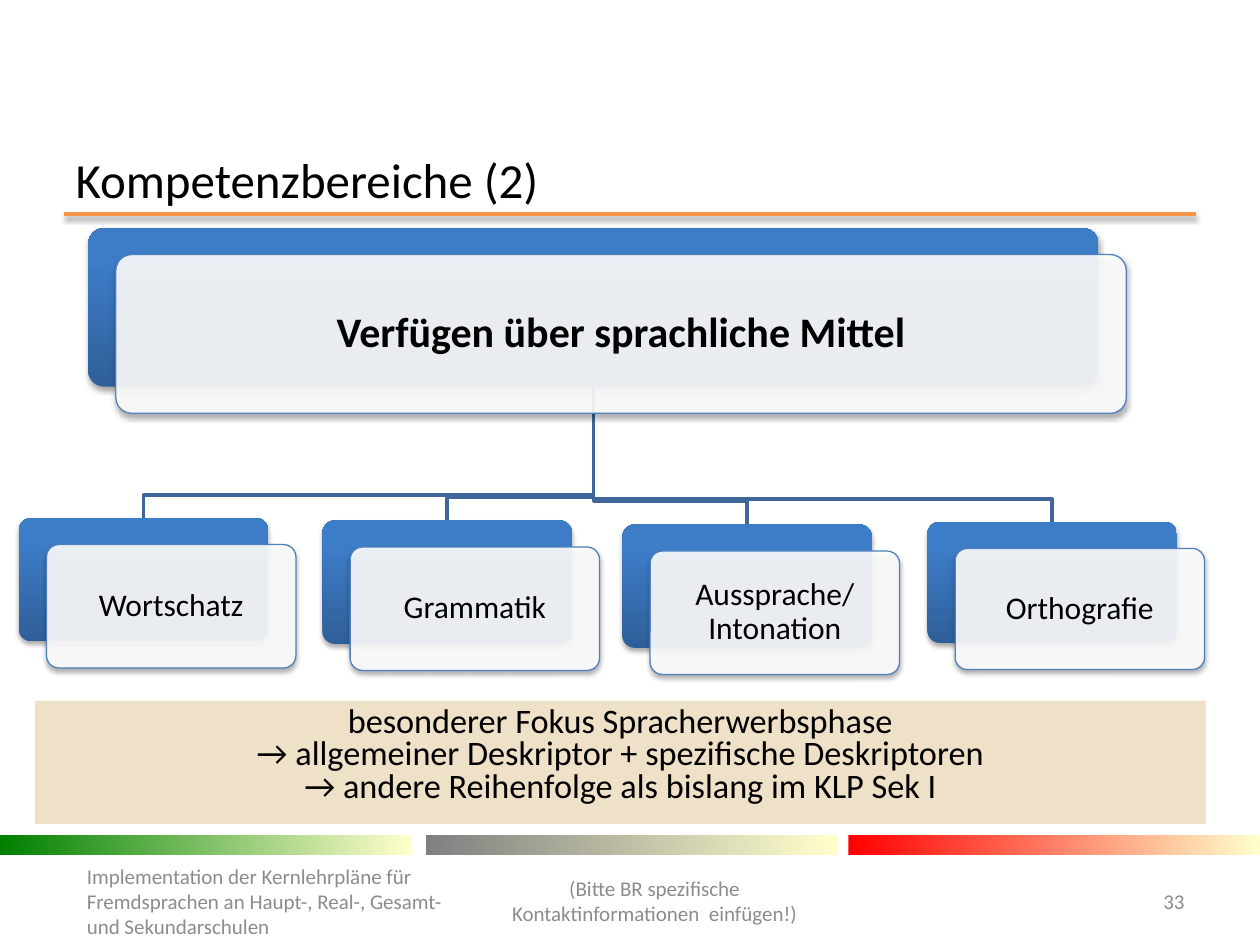
from lxml.etree import SubElement
from pptx import Presentation
from pptx.dml.color import RGBColor
from pptx.enum.shapes import MSO_CONNECTOR, MSO_SHAPE
from pptx.enum.text import MSO_ANCHOR, MSO_AUTO_SIZE, PP_ALIGN
from pptx.oxml.ns import qn
from pptx.util import Pt

FONT = "Calibri"
COLORS = {
    "text": "000000", "footer": "8C8C8C", "rule": "F79646",
    "link": "3F6797", "card_dark": "2F5F99", "card_light": "3D7CC7",
    "front": "FFFFFF", "front_line": "4F81BD", "band": "EFE0C8",
    "green": "008000", "grey": "808080", "red": "FF0000", "cream": "FFFFCC",
}
ROOT = (50.4, 130.3, 577.4, 90.7)
CARD_WIDTH = 142.5
CHILDREN = [  # label, left, top, height
    ("Wortschatz", 10.8, 296, 70.5),
    ("Grammatik", 184.3, 297.4, 70.5),
    ("Aussprache/ Intonation", 355.7, 299.7, 70.5),
    ("Orthografie", 530, 298.2, 69.2),
]
FRONT_OFFSET = (15.8, 15.2)
BEND_HEIGHT = 13


def color(name):
    return RGBColor.from_string(COLORS[name])


def set_shadow(shape, opacity=0):
    """Replace the theme shadow by a soft one below, or by none."""
    effects = SubElement(shape.element.spPr, qn("a:effectLst"))
    if opacity:
        shadow = SubElement(effects, qn("a:outerShdw"), blurRad=str(Pt(3.1)),
                            dist=str(Pt(1.8)), dir="5400000", rotWithShape="0")
        shade = SubElement(shadow, qn("a:srgbClr"), val="000000")
        SubElement(shade, qn("a:alpha"), val=str(opacity * 1000))


def set_gradient(shape, start, end, angle=0, end_position=1):
    shape.fill.gradient()
    shape.fill.gradient_angle = angle
    first, last = shape.fill.gradient_stops
    first.color.rgb, first.position = color(start), 0
    last.color.rgb, last.position = color(end), end_position


def add_box(slide, kind, left, top, width, height):
    shape = slide.shapes.add_shape(kind, Pt(left), Pt(top), Pt(width), Pt(height))
    shape.line.fill.background()
    return shape


def write(shape, lines, size, color_name="text", align=PP_ALIGN.LEFT,
          anchor=MSO_ANCHOR.MIDDLE, spacing=1, bold=False):
    frame = shape.text_frame
    frame.word_wrap = True
    frame.auto_size = MSO_AUTO_SIZE.NONE
    frame.vertical_anchor = anchor
    frame.text = "\n".join(lines)
    for paragraph in frame.paragraphs:
        paragraph.alignment = align
        paragraph.line_spacing = spacing
        paragraph.font.name = FONT
        paragraph.font.size = Pt(size)
        paragraph.font.bold = bold
        paragraph.font.color.rgb = color(color_name)


def add_title(slide, text):
    title = slide.shapes.title
    title.left, title.top, title.width, title.height = Pt(36), Pt(88.5), Pt(648), Pt(28)
    write(title, [text], 28)


def add_rule(slide):
    rule = slide.shapes.add_connector(
        MSO_CONNECTOR.STRAIGHT, Pt(36.7), Pt(122.4), Pt(683.3), Pt(122.4))
    rule.line.color.rgb = color("rule")
    rule.line.width = Pt(2)
    set_shadow(rule, 38)


def add_footer_bars(slide):
    for left, start in ((0, "green"), (243.4, "grey"), (484.8, "red")):
        bar = add_box(slide, MSO_SHAPE.RECTANGLE, left, 477.2, 235.2, 11.4)
        set_gradient(bar, start, "cream")
        set_shadow(bar)


def add_link(slide, left, top):
    """Draw the elbow line from the root card to the card at left, top."""
    root_x, root_y = ROOT[0] + ROOT[2] / 2, ROOT[1] + ROOT[3]
    child_x, bend_y = left + CARD_WIDTH / 2, top - BEND_HEIGHT
    builder = slide.shapes.build_freeform(Pt(root_x), Pt(root_y))
    corners = [(root_x, bend_y), (child_x, bend_y), (child_x, top)]
    builder.add_line_segments([(Pt(x), Pt(y)) for x, y in corners], close=False)
    link = builder.convert_to_shape()
    link.fill.background()
    link.line.color.rgb = color("link")
    link.line.width = Pt(2)
    set_shadow(link)


def add_card(slide, label, left, top, width, height, size, margin, bold=False):
    """Add a blue card with a translucent labelled card in front of it."""
    back = add_box(slide, MSO_SHAPE.ROUNDED_RECTANGLE, left, top, width, height)
    set_gradient(back, "card_dark", "card_light", angle=90, end_position=0.8)
    front = add_box(slide, MSO_SHAPE.ROUNDED_RECTANGLE, left + FRONT_OFFSET[0],
                    top + FRONT_OFFSET[1], width, height)
    front.fill.solid()
    front.fill.fore_color.rgb = color("front")
    fill_color = front.element.spPr.find(qn("a:solidFill"))[0]
    SubElement(fill_color, qn("a:alpha"), val="90000")
    front.line.color.rgb = color("front_line")
    front.line.width = Pt(0.75)
    for card in (back, front):
        card.adjustments[0] = 0.1
        set_shadow(card, 35)
    frame = front.text_frame
    frame.margin_left = frame.margin_right = Pt(margin)
    frame.margin_top = frame.margin_bottom = Pt(margin)
    write(front, [label], size, align=PP_ALIGN.CENTER, spacing=0.9, bold=bold)


def add_band(slide, lines):
    band = add_box(slide, MSO_SHAPE.RECTANGLE, 20, 400.3, 669, 70.5)
    band.fill.solid()
    band.fill.fore_color.rgb = color("band")
    set_shadow(band)
    write(band, lines, 19.6, align=PP_ALIGN.CENTER, anchor=MSO_ANCHOR.TOP, spacing=0.8)


def add_footer(slide, text, left, top, width, height, align):
    box = slide.shapes.add_textbox(Pt(left), Pt(top), Pt(width), Pt(height))
    write(box, [text], 12, "footer", align)


def main():
    presentation = Presentation()
    presentation.slide_width, presentation.slide_height = Pt(720), Pt(540)
    slide = presentation.slides.add_slide(presentation.slide_layouts[5])

    add_rule(slide)
    add_footer_bars(slide)
    add_title(slide, "Kompetenzbereiche (2)")
    for _, left, top, _ in reversed(CHILDREN):
        add_link(slide, left, top)
    add_card(slide, "Verfügen über sprachliche Mittel", *ROOT, 24, 7.2, bold=True)
    for label, left, top, height in CHILDREN:
        add_card(slide, label, left, top, CARD_WIDTH, height, 18, 5)
    add_band(slide, [
        "besonderer Fokus Spracherwerbsphase"
        "\v→ allgemeiner Deskriptor + spezifische Deskriptoren",
        "→ andere Reihenfolge als bislang im KLP Sek I",
    ])
    add_footer(slide, "Implementation der Kernlehrpläne für Fremdsprachen an "
               "Haupt-, Real-, Gesamt- und Sekundarschulen",
               42.5, 490.5, 226.8, 49, PP_ALIGN.LEFT)
    add_footer(slide, "(Bitte BR spezifische Kontaktinformationen  einfügen!)",
               269.3, 489, 209.5, 51, PP_ALIGN.CENTER)
    add_footer(slide, "33", 638, 500.5, 46, 28.8, PP_ALIGN.RIGHT)

    presentation.save("out.pptx")


if __name__ == "__main__":
    main()
